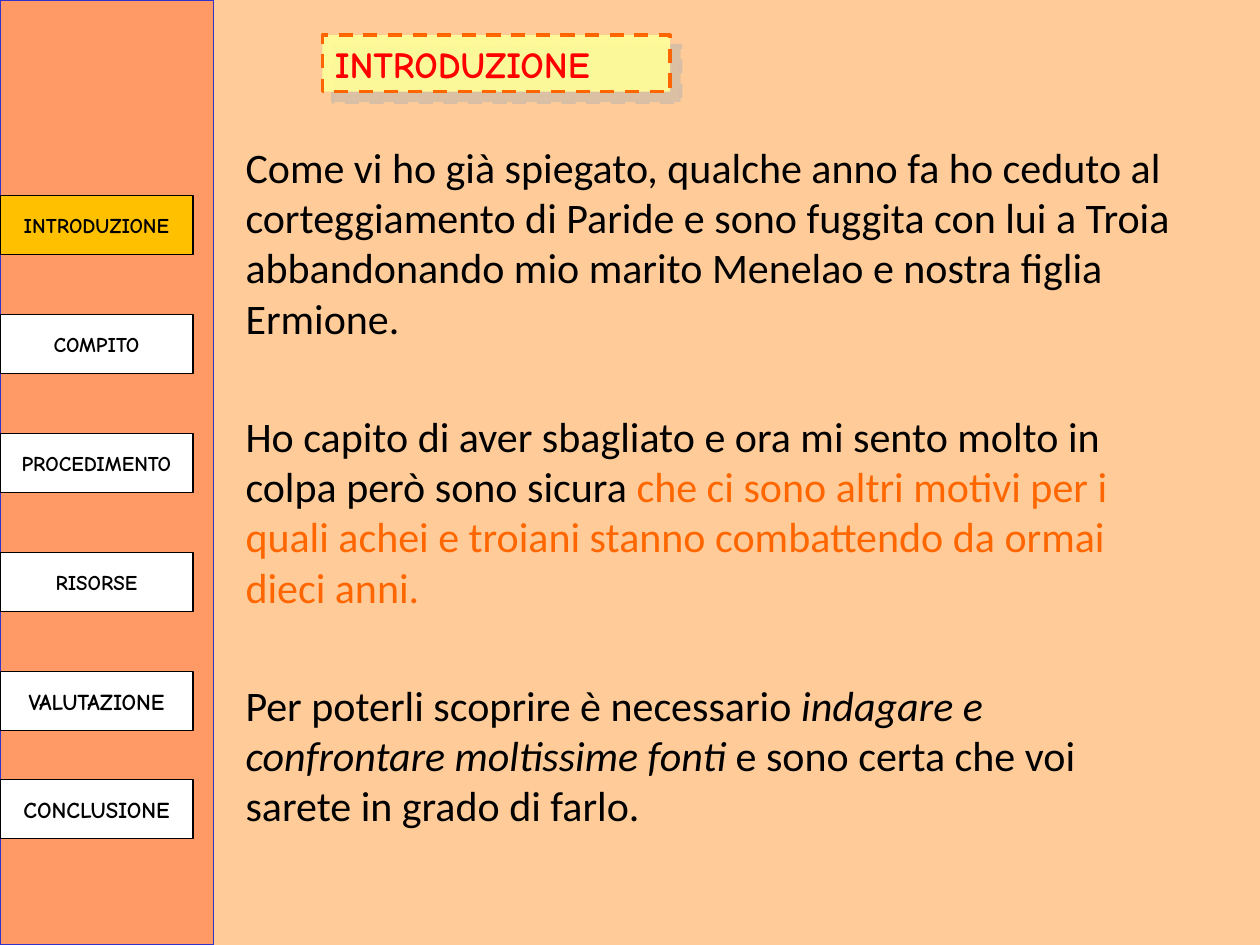
from lxml import etree
from pptx import Presentation
from pptx import util as u
from pptx.dml.color import RGBColor
from pptx.enum import dml, shapes, text
from pptx.oxml import parse_xml

NS = "http://schemas.openxmlformats.org/drawingml/2006/main"


def rgb(code):
    return RGBColor.from_string(code)


def box(left, top, wide, high, fill, edge, weight):
    rect = slide.shapes.add_shape(shapes.MSO_SHAPE.RECTANGLE, u.Cm(left),
                                  u.Cm(top), u.Cm(wide), u.Cm(high))
    rect.shadow.inherit = False
    rect.fill.solid()
    rect.fill.fore_color.rgb = rgb(fill)
    rect.line.color.rgb = rgb(edge)
    rect.line.width = u.Pt(weight)
    return rect


deck = Presentation()
deck.slide_width, deck.slide_height = u.Cm(25.4), u.Cm(19.05)
slide = deck.slides.add_slide(deck.slide_layouts[6])
slide.background.fill.solid()
slide.background.fill.fore_color.rgb = rgb("FFCC99")

# Side bar
box(0, 0, 4.3, 19.05, "FF9966", "3333CC", 0.75)

# Menu buttons: even steps, the last one a little closer
menu = [("INTRODUZIONE", 12), ("COMPITO", 12), ("PROCEDIMENTO", 12),
        ("RISORSE", 12), ("VALUTAZIONE", 13), ("CONCLUSIONE", 13)]
for i, (name, size) in enumerate(menu):
    here = i == 0
    top = 15.72 if i == len(menu) - 1 else 3.94 + 2.4 * i
    btn = box(0, top, 3.89, 1.19, "FFC000" if here else "FFFFFF",
              "000000", 1 if here else 0.75)
    frame = btn.text_frame
    frame.word_wrap = False
    frame.vertical_anchor = text.MSO_ANCHOR.MIDDLE
    frame.text = name
    para = frame.paragraphs[0]
    para.alignment = text.PP_ALIGN.CENTER
    font = para.runs[0].font
    font.name, font.size, font.bold = "Comic Neue", u.Pt(size), True
    font.color.rgb = rgb("000000")

# Title with dashed edge
title = box(6.5, 0.71, 7.01, 1.14, "FFFF99", "FF6600", 2)
title.line.dash_style = dml.MSO_LINE.DASH
frame = title.text_frame
frame.word_wrap = True
frame.vertical_anchor = text.MSO_ANCHOR.TOP
frame.text = "INTRODUZIONE"
frame.paragraphs[0].alignment = text.PP_ALIGN.LEFT
font = frame.paragraphs[0].runs[0].font
font.name, font.size, font.bold = "Comic Neue", u.Pt(21), True
font.color.rgb = rgb("FF0000")

# Title transparency and shadow
props = title.fill._xPr
tint = props.find(f"{{{NS}}}solidFill/{{{NS}}}srgbClr")
etree.SubElement(tint, f"{{{NS}}}alpha", val="90000")
props.find(f"{{{NS}}}effectLst").append(parse_xml(
    f'<a:outerShdw xmlns:a="{NS}" dist="{u.Pt(8.5)}" dir="2700000" '
    'algn="ctr" rotWithShape="0"><a:srgbClr val="B2B2B2">'
    '<a:alpha val="50000"/></a:srgbClr></a:outerShdw>'))

# Body: each run is wording, colour, italic
body = [
    [("Come vi ho già spiegato, qualche anno fa ho ceduto al corteggiamento "
      "di Paride e sono fuggita con lui a Troia abbandonando mio marito "
      "Menelao e nostra figlia Ermione.", "000000", False)],
    [("Ho capito di aver sbagliato e ora mi sento molto in colpa però sono "
      "sicura ", "000000", False),
     ("che ci sono altri motivi per i quali achei e troiani stanno "
      "combattendo da ormai dieci anni.", "FF6600", False)],
    [("Per poterli scoprire è necessario ", "000000", False),
     ("indagare e confrontare moltissime fonti", "000000", True),
     (" e sono certa che voi sarete in grado di farlo.", "000000", False)],
]
area = slide.shapes.add_textbox(u.Cm(4.7), u.Cm(2.72), u.Cm(19.43), u.Cm(14.3))
frame = area.text_frame
frame.word_wrap = True
for i, parts in enumerate(body):
    para = frame.add_paragraph() if i else frame.paragraphs[0]
    para.space_before = u.Pt(38.5 if i else 0)
    for words, tone, slant in parts:
        run = para.add_run()
        run.text = words
        font = run.font
        font.name, font.size, font.italic = "Calibri", u.Pt(24), slant
        font.color.rgb = rgb(tone)

deck.save("out.pptx")
